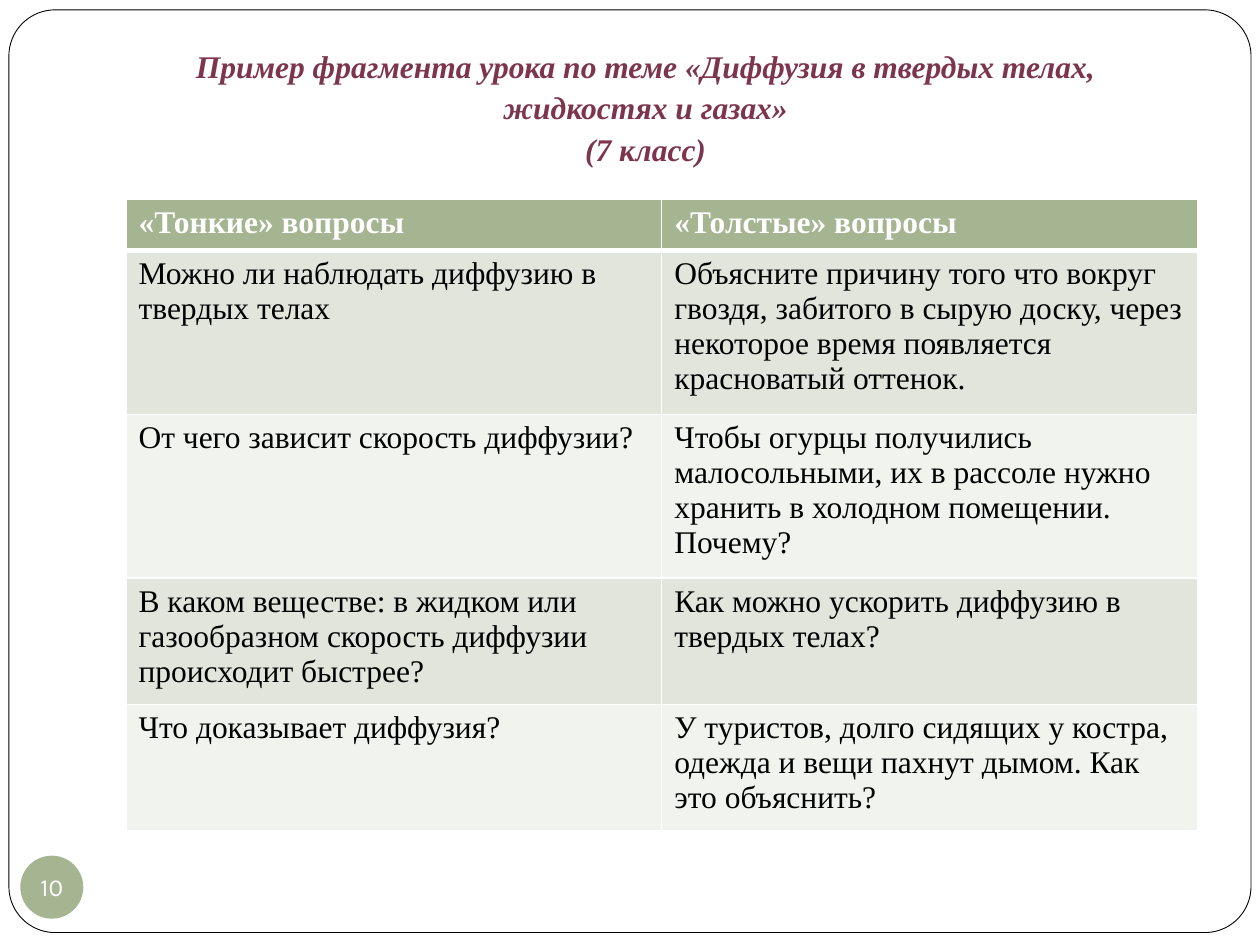
from dataclasses import dataclass

from lxml import etree
from pptx import Presentation
from pptx.dml.color import RGBColor
from pptx.enum import shapes, text
from pptx.oxml import ns
from pptx.util import Cm, Pt


@dataclass(frozen=True)
class Theme:
    font: str = "Times New Roman"
    number_font: str = "Karla"
    size: int = 18
    number_size: int = 14
    title: str = "7C354D"
    accent: str = "A5B592"
    bands: tuple = ("E1E5DC", "F0F3EE")
    white: str = "FFFFFF"
    black: str = "000000"


THEME = Theme()

TITLE = (
    "Пример фрагмента урока по теме «Диффузия в твердых телах, жидкостях и газах»",
    "(7 класс)",
)
QUESTIONS = (
    ("«Тонкие» вопросы", "«Толстые» вопросы"),
    ("Можно ли наблюдать диффузию в твердых телах",
     "Объясните причину того что вокруг гвоздя, забитого в сырую доску, "
     "через некоторое время появляется красноватый оттенок."),
    ("От чего зависит скорость диффузии?",
     "Чтобы огурцы получились малосольными, их в рассоле нужно хранить "
     "в холодном помещении. Почему?"),
    ("В каком веществе: в жидком или газообразном скорость диффузии "
     "происходит быстрее?",
     "Как можно ускорить диффузию в твердых телах?"),
    ("Что доказывает диффузия?",
     "У туристов, долго сидящих у костра, одежда и вещи пахнут дымом. "
     "Как это объяснить?"),
)
ROW_HEIGHTS = (1.04, 3.06, 3.06, 2.36, 2.36)


def rgb(value):
    return RGBColor.from_string(value)


def box(*lengths):
    return [Cm(n) for n in lengths]


def set_font(p, color, size=THEME.size, name=THEME.font, bold=False, italic=False):
    f = p.font
    f.name, f.size, f.bold, f.italic = name, Pt(size), bold, italic
    f.color.rgb = rgb(color)


def add_shape(s, kind, place, fill, line=None):
    sp = s.shapes.add_shape(kind, *box(*place))
    sp.shadow.inherit = False
    sp.fill.solid()
    sp.fill.fore_color.rgb = rgb(fill)
    if line:
        sp.line.color.rgb = rgb(line)
        sp.line.width = Pt(0.5)
    else:
        sp.line.fill.background()
    return sp


def add_frame(s):
    sp = add_shape(s, shapes.MSO_SHAPE.ROUNDED_RECTANGLE,
                   (0.18, 0.2, 25.04, 18.6), THEME.white, THEME.black)
    sp.adjustments[0] = 0.05
    # Keep the frame behind the title
    s.shapes.title.element.addprevious(sp.element)


def add_title(s):
    sp = s.shapes.title
    sp.left, sp.top, sp.width, sp.height = box(2.31, 0.74, 21.41, 2.57)
    tf = sp.text_frame
    tf.text = "\n".join(TITLE)
    tf.word_wrap = True
    tf.auto_size = text.MSO_AUTO_SIZE.SHAPE_TO_FIT_TEXT
    tf.vertical_anchor = text.MSO_ANCHOR.TOP
    for p in tf.paragraphs:
        p.alignment = text.PP_ALIGN.CENTER
        p.line_spacing = 1.1
        set_font(p, THEME.title, bold=True, italic=True)


def set_borders(cell, widths):
    tc_pr = cell._tc.get_or_add_tcPr()
    for side, width in widths.items():
        ln = etree.SubElement(tc_pr, ns.qn(f"a:ln{side}"), w=str(Pt(width)))
        fill = etree.SubElement(ln, ns.qn("a:solidFill"))
        etree.SubElement(fill, ns.qn("a:srgbClr"), val=THEME.white)


def add_questions(s):
    table = s.shapes.add_table(len(QUESTIONS), 2,
                               *box(2.54, 4.01, 21.6, sum(ROW_HEIGHTS))).table
    for r, (row, height) in enumerate(zip(QUESTIONS, ROW_HEIGHTS)):
        table.rows[r].height = Cm(height)
        header = r == 0
        for c, words in enumerate(row):
            cell = table.cell(r, c)
            cell.text = words
            set_font(cell.text_frame.paragraphs[0],
                     THEME.white if header else THEME.black, bold=header)
            # The rule under the header is thicker than the rest
            set_borders(cell, {"L": 1, "R": 1, "T": 3 if r == 1 else 1,
                               "B": 3 if header else 1})
            cell.fill.solid()
            cell.fill.fore_color.rgb = rgb(
                THEME.accent if header else THEME.bands[(r - 1) % 2])


def add_page_number(s, number):
    sp = add_shape(s, shapes.MSO_SHAPE.OVAL, (0.41, 17.25, 1.27, 1.27), THEME.accent)
    tf = sp.text_frame
    tf.margin_left = tf.margin_right = tf.margin_top = tf.margin_bottom = 0
    tf.word_wrap = False
    tf.vertical_anchor = text.MSO_ANCHOR.MIDDLE
    p = tf.paragraphs[0]
    p.text = number
    p.alignment = text.PP_ALIGN.CENTER
    set_font(p, THEME.white, THEME.number_size, THEME.number_font)


def main():
    prs = Presentation()
    prs.slide_width, prs.slide_height = box(25.4, 19.05)
    s = prs.slides.add_slide(prs.slide_layouts[5])  # Title Only

    add_frame(s)
    add_title(s)
    add_questions(s)
    add_page_number(s, "10")
    prs.save("out.pptx")


if __name__ == "__main__":
    main()
